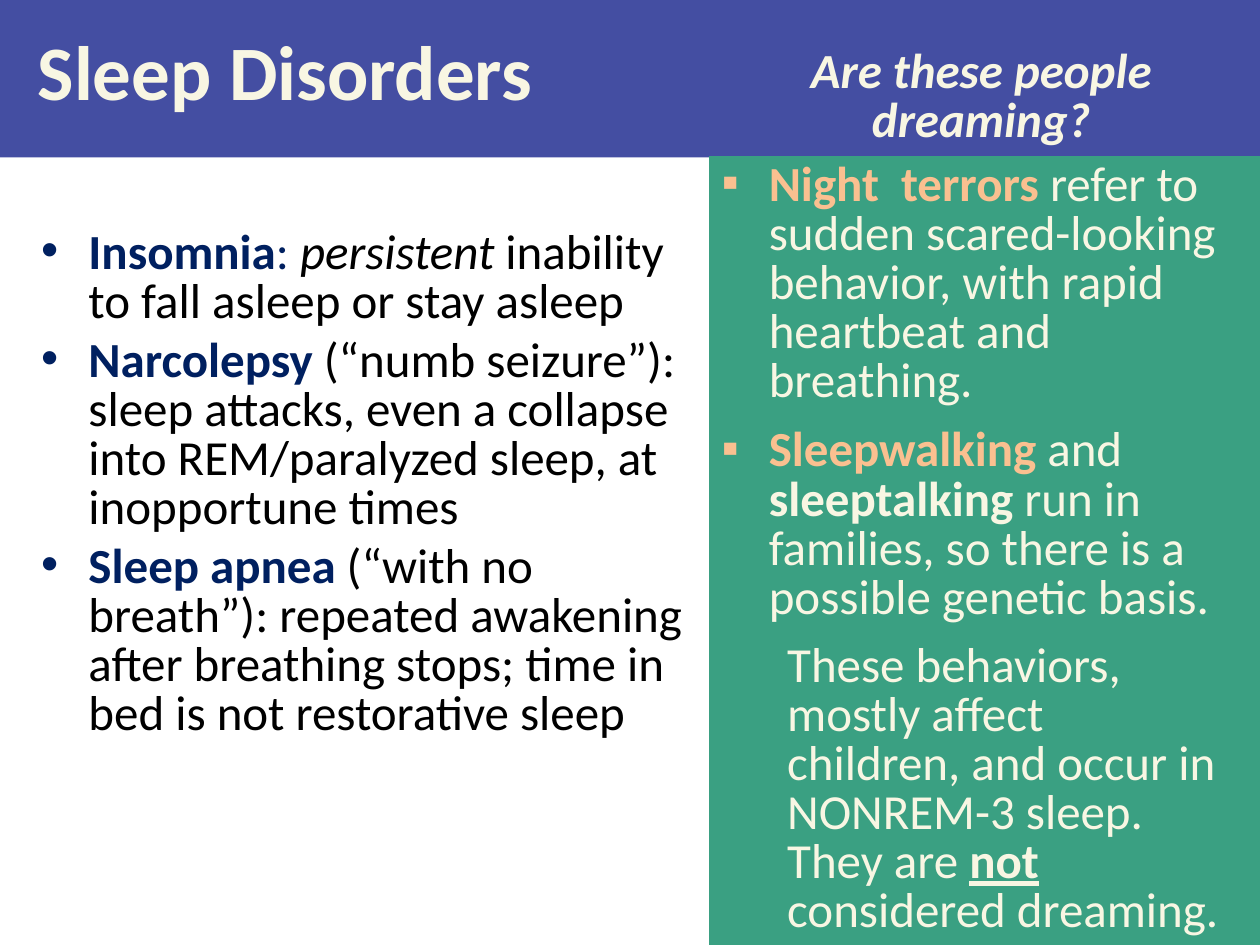
from lxml.etree import SubElement
from pptx import Presentation
from pptx.dml.color import RGBColor
from pptx.enum.shapes import MSO_SHAPE
from pptx.enum.text import MSO_ANCHOR, PP_ALIGN
from pptx.oxml.ns import qn
from pptx.util import Pt

INDIGO = RGBColor(0x44, 0x4E, 0xA2)
GREEN = RGBColor(0x3A, 0xA0, 0x82)
CREAM = RGBColor(0xF8, 0xF6, 0xE3)
NAVY = RGBColor(0x00, 0x20, 0x60)
PEACH = RGBColor(0xFA, 0xC0, 0x90)
BLACK = RGBColor(0x00, 0x00, 0x00)

FONT = "Calibri"
BODY_SIZE = 28
BULLET_INDENT = 27


def add_panel(slide, box, color):
    """Add a plain filled rectangle that can hold text."""
    shape = slide.shapes.add_shape(MSO_SHAPE.RECTANGLE, *map(Pt, box))
    shape.shadow.inherit = False
    shape.fill.solid()
    shape.fill.fore_color.rgb = color
    shape.line.fill.background()
    return shape.text_frame


def add_text_box(slide, box):
    return slide.shapes.add_textbox(*map(Pt, box)).text_frame


def add_bullet(paragraph, character):
    properties = paragraph._p.get_or_add_pPr()
    properties.set("marL", str(Pt(BULLET_INDENT)))
    properties.set("indent", str(-Pt(BULLET_INDENT)))
    SubElement(properties, qn("a:buFont"), typeface="Arial")
    SubElement(properties, qn("a:buChar"), char=character)


def write_paragraphs(text_frame, paragraphs, size=BODY_SIZE, line=BODY_SIZE,
                     align=PP_ALIGN.LEFT, anchor=MSO_ANCHOR.TOP,
                     bullet=None, space_after=0):
    """Each paragraph is a list of (text, color, styles); styles uses b, i, u."""
    text_frame.word_wrap = True
    text_frame.vertical_anchor = anchor
    for index, runs in enumerate(paragraphs):
        paragraph = text_frame.add_paragraph() if index else text_frame.paragraphs[0]
        paragraph.alignment = align
        paragraph.line_spacing = Pt(line)
        if bullet:
            paragraph.space_before = Pt(0.2 * size)
            paragraph.space_after = Pt(space_after)
            add_bullet(paragraph, bullet)
        for text, color, styles in runs:
            run = paragraph.add_run()
            run.text = text
            run.font.name = FONT
            run.font.size = Pt(size)
            run.font.color.rgb = color
            run.font.bold = "b" in styles
            run.font.italic = "i" in styles
            run.font.underline = "u" in styles


def add_header(slide, left, top, width, height):
    # Title band
    title = add_panel(slide, (left, top, width, height), INDIGO)
    title.margin_left = Pt(21.6)
    write_paragraphs(title, [[("Sleep Disorders", CREAM, "b")]],
                     size=44, line=42, anchor=MSO_ANCHOR.MIDDLE)
    # Question at the right end of the band
    question = add_text_box(slide, (left + 411, top + 24.5, 299.5, 64))
    write_paragraphs(question, [[("Are these people dreaming?", CREAM, "bi")]],
                     align=PP_ALIGN.CENTER)


def add_disorder_list(slide, left, top, width, height):
    disorders = [
        [("Insomnia", NAVY, "b"), (": ", NAVY, ""), ("persistent ", BLACK, "i"),
         ("inability to fall asleep or stay asleep", BLACK, "")],
        [("Narcolepsy ", NAVY, "b"),
         ("(“numb seizure”): sleep attacks, even a collapse into "
          "REM/paralyzed sleep, at inopportune times", BLACK, "")],
        [("Sleep apnea ", NAVY, "b"),
         ("(“with no breath”): repeated awakening after breathing stops; "
          "time in bed is not restorative sleep", BLACK, "")],
    ]
    text_frame = add_text_box(slide, (left, top, width, height))
    write_paragraphs(text_frame, disorders, bullet="•")


def add_behavior_panel(slide, left, top, width, height):
    # Bulleted behaviors
    behaviors = [
        [("Night  terrors ", PEACH, "b"),
         ("refer to sudden scared-looking behavior, with rapid heartbeat "
          "and breathing.", CREAM, "")],
        [("Sleepwalking", PEACH, "b"), (" and ", CREAM, ""),
         ("sleeptalking", CREAM, "b"),
         (" run in families, so there is a possible genetic basis.", CREAM, "")],
    ]
    panel = add_panel(slide, (left, top, width, height), GREEN)
    write_paragraphs(panel, behaviors, bullet="▪", space_after=6)
    # Closing remark
    remark = add_text_box(slide, (left + 37.5, top + 275, 262, 177))
    write_paragraphs(remark, [[
        ("These behaviors, mostly affect children, and occur in NONREM-3 "
         "sleep. They are ", CREAM, ""),
        ("not ", CREAM, "bu"),
        ("considered dreaming.", CREAM, "")]])


def main():
    presentation = Presentation()
    presentation.slide_width, presentation.slide_height = Pt(720), Pt(540)
    slide = presentation.slides.add_slide(presentation.slide_layouts[6])
    add_header(slide, 0, 0, 720, 90)
    add_disorder_list(slide, 16.5, 128, 385, 361.5)
    add_behavior_panel(slide, 405.25, 89.25, 314.75, 450.75)
    presentation.save("out.pptx")


if __name__ == "__main__":
    main()
